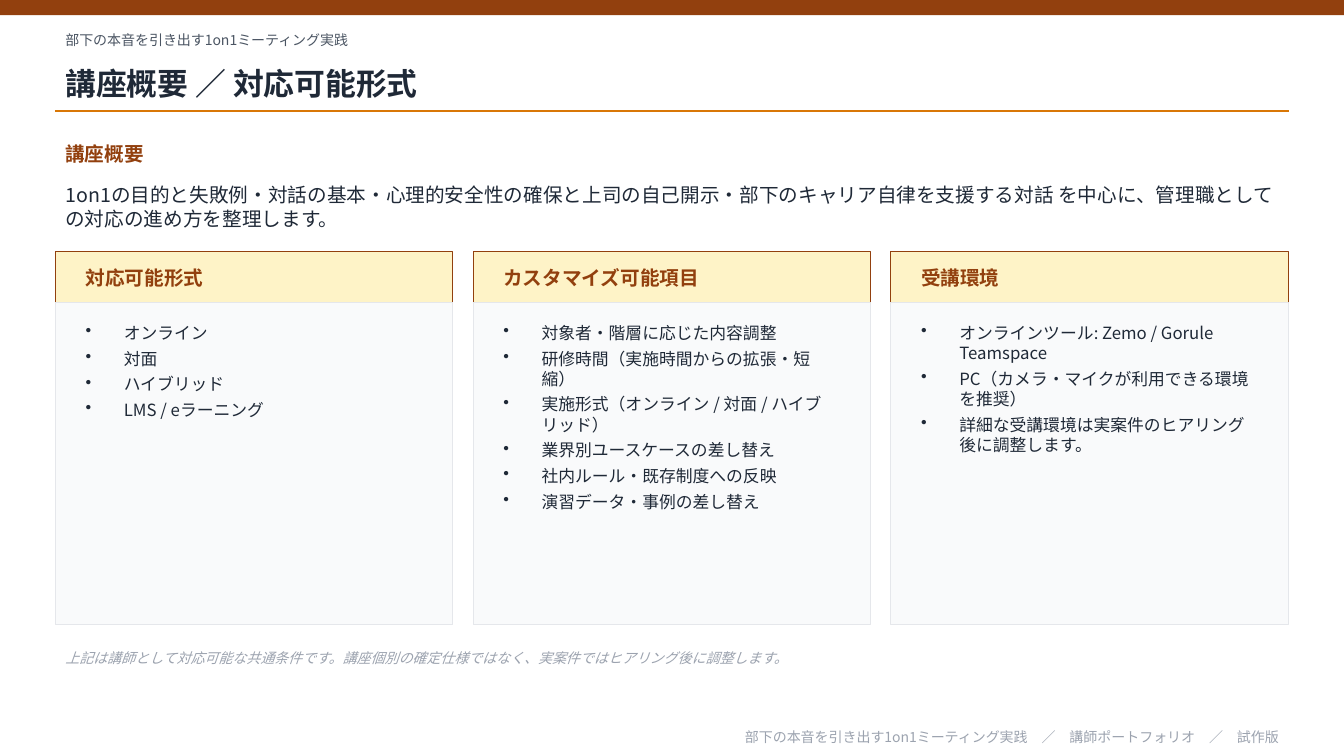
from dataclasses import dataclass

from lxml.etree import SubElement
from pptx import Presentation
from pptx.dml.color import RGBColor
from pptx.enum.shapes import MSO_CONNECTOR, MSO_SHAPE
from pptx.enum.text import MSO_ANCHOR, PP_ALIGN
from pptx.oxml.ns import qn
from pptx.util import Emu, Pt

COURSE = "部下の本音を引き出す1on1ミーティング実践"
TITLE = "講座概要 ／ 対応可能形式"
HEADING = "講座概要"
SUMMARY = (
    "1on1の目的と失敗例・対話の基本・心理的安全性の確保と上司の自己開示・"
    "部下のキャリア自律を支援する対話 を中心に、管理職としての対応の進め方を整理します。"
)
CARDS = [
    ("対応可能形式", ["オンライン", "対面", "ハイブリッド", "LMS / eラーニング"]),
    ("カスタマイズ可能項目", [
        "対象者・階層に応じた内容調整",
        "研修時間（実施時間からの拡張・短縮）",
        "実施形式（オンライン / 対面 / ハイブリッド）",
        "業界別ユースケースの差し替え",
        "社内ルール・既存制度への反映",
        "演習データ・事例の差し替え",
    ]),
    ("受講環境", [
        "オンラインツール: Zemo / Gorule Teamspace",
        "PC（カメラ・マイクが利用できる環境を推奨）",
        "詳細な受講環境は実案件のヒアリング後に調整します。",
    ]),
]
NOTE = "上記は講師として対応可能な共通条件です。講座個別の確定仕様ではなく、実案件ではヒアリング後に調整します。"
FOOTER = "　／　".join([COURSE, "講師ポートフォリオ", "試作版"])


@dataclass(frozen=True)
class Theme:
    font: str = "Noto Sans CJK JP"
    brand: str = "92400E"
    accent: str = "D97706"
    header: str = "FEF3C7"
    panel: str = "F9FAFB"
    border: str = "E5E7EB"
    ink: str = "1F2937"
    soft: str = "4B5563"
    muted: str = "9CA3AF"
    title: int = 22
    lead: int = 14
    body: int = 12
    small: int = 10


T = Theme()
EMU_PER_PX = 9144
SLIDE_W, SLIDE_H = 1333, 750
MARGIN, GAP, PAD, INDENT = 55, 20, 20, 38
CONTENT_W = SLIDE_W - 2 * MARGIN
CARD_W = (CONTENT_W - GAP * (len(CARDS) - 1)) / len(CARDS)
HEAD_Y, HEAD_H, PANEL_H = 250, 50, 320
PANEL_Y = HEAD_Y + HEAD_H


def px(n):
    return Emu(round(n * EMU_PER_PX))


def rgb(color):
    return RGBColor.from_string(color)


def add_text(s, text, x, y, w, h, size=T.small, color=T.ink, bold=False, italic=False,
             align=PP_ALIGN.LEFT, anchor=MSO_ANCHOR.MIDDLE, bullets=False):
    tf = s.shapes.add_textbox(px(x), px(y), px(w), px(h)).text_frame
    tf.word_wrap = True
    tf.vertical_anchor = anchor
    for i, line in enumerate(text if bullets else [text]):
        p = tf.add_paragraph() if i else tf.paragraphs[0]
        p.alignment = align
        if bullets:
            p.space_after = Pt(4)
            pPr = p._p.get_or_add_pPr()
            pPr.set("marL", str(px(INDENT)))
            pPr.set("indent", str(-px(INDENT)))
            SubElement(pPr, qn("a:buChar"), char="•")
        r = p.add_run()
        r.text = line
        f = r.font
        f.name, f.size, f.bold, f.italic = T.font, Pt(size), bold, italic
        f.color.rgb = rgb(color)
        SubElement(r._r.get_or_add_rPr(), qn("a:ea"), typeface=T.font)


def add_rect(s, x, y, w, h, fill, line=None):
    sp = s.shapes.add_shape(MSO_SHAPE.RECTANGLE, px(x), px(y), px(w), px(h))
    sp.shadow.inherit = False
    sp.fill.solid()
    sp.fill.fore_color.rgb = rgb(fill)
    if line:
        sp.line.color.rgb = rgb(line)
        sp.line.width = Pt(0.75)
    else:
        sp.line.fill.background()


def add_rule(s, y):
    cx = s.shapes.add_connector(MSO_CONNECTOR.STRAIGHT, px(MARGIN), px(y),
                                px(MARGIN + CONTENT_W), px(y))
    cx.line.color.rgb = rgb(T.accent)
    cx.line.width = Pt(1)
    SubElement(cx._element.spPr, qn("a:effectLst"))


def add_card(s, x, heading, items):
    inner_x, inner_w = x + PAD, CARD_W - 2 * PAD
    add_rect(s, x, HEAD_Y, CARD_W, HEAD_H, T.header, T.brand)
    add_text(s, heading, inner_x, HEAD_Y, inner_w, HEAD_H, size=T.lead, color=T.brand, bold=True)
    add_rect(s, x, PANEL_Y, CARD_W, PANEL_H, T.panel, T.border)
    add_text(s, items, inner_x, PANEL_Y + 15, inner_w, PANEL_H - 35, size=T.body,
             anchor=MSO_ANCHOR.TOP, bullets=True)


def main():
    prs = Presentation()
    prs.slide_width, prs.slide_height = px(SLIDE_W), px(SLIDE_H)
    s = prs.slides.add_slide(prs.slide_layouts[6])

    add_rect(s, 0, 0, SLIDE_W, 15, T.brand)
    add_text(s, COURSE, MARGIN, 25, CONTENT_W, 30, color=T.soft)
    add_text(s, TITLE, MARGIN, 55, CONTENT_W, 55, size=T.title, bold=True)
    add_rule(s, 110)
    add_text(s, HEADING, MARGIN, 135, CONTENT_W, 35, size=T.lead, color=T.brand, bold=True)
    add_text(s, SUMMARY, MARGIN, 175, CONTENT_W, 60, size=T.lead)
    for i, (heading, items) in enumerate(CARDS):
        add_card(s, MARGIN + i * (CARD_W + GAP), heading, items)
    add_text(s, NOTE, MARGIN, 635, CONTENT_W, 35, color=T.muted, italic=True)
    add_text(s, FOOTER, MARGIN, 720, CONTENT_W, 22, color=T.muted, align=PP_ALIGN.RIGHT)

    prs.save("out.pptx")


if __name__ == "__main__":
    main()
